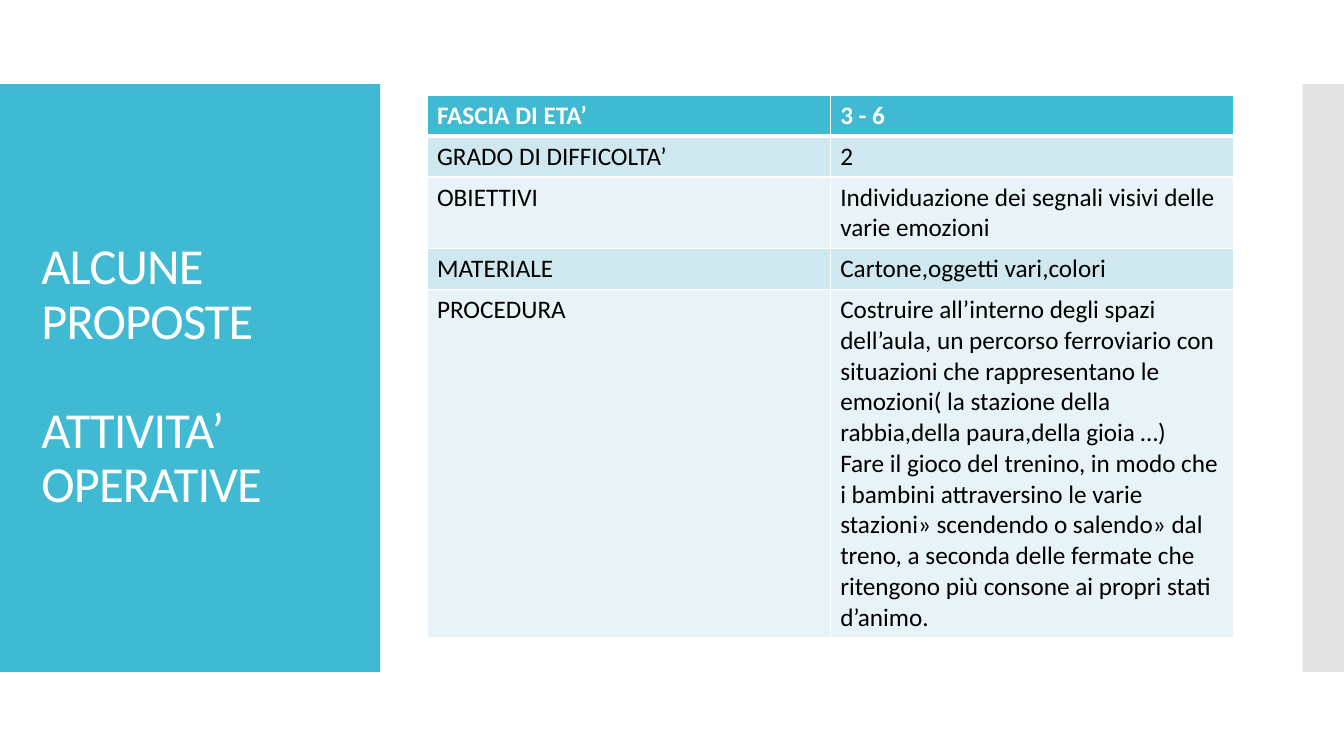
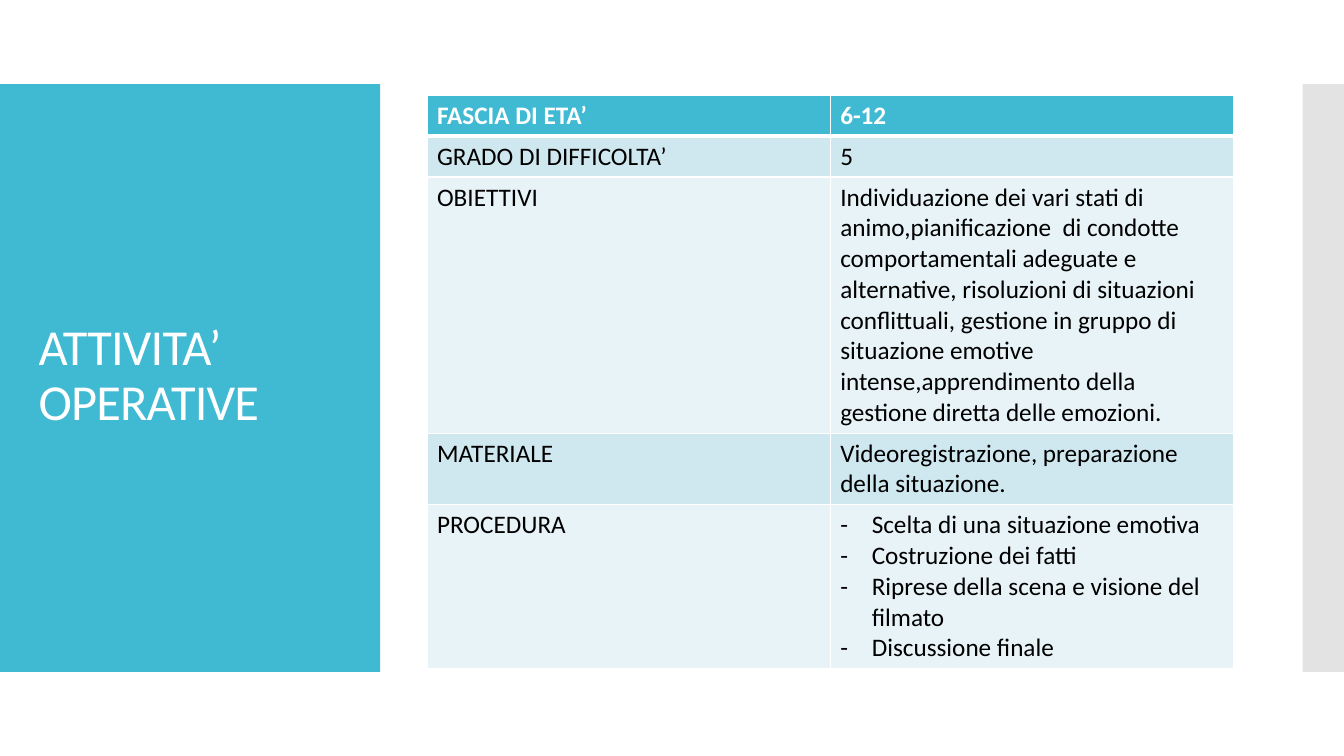
from dataclasses import dataclass

from lxml import etree
from pptx import Presentation
from pptx.dml.color import RGBColor
from pptx.enum.text import MSO_ANCHOR, MSO_AUTO_SIZE, PP_ALIGN
from pptx.enum.shapes import MSO_SHAPE
from pptx.oxml.ns import qn
from pptx.slide import Slide, SlideLayout
from pptx.util import Pt

RECTANGLE = MSO_SHAPE.RECTANGLE
MIDDLE = MSO_ANCHOR.MIDDLE
LEFT = PP_ALIGN.LEFT
NO_AUTOFIT = MSO_AUTO_SIZE.NONE

COLORS = {
    "teal": "40BAD2",
    "gray": "C8C8C8",
    "white": "FFFFFF",
    "black": "000000",
    "row_dark": "CFE7EE",
    "row_light": "E8F3F7",
}
FONT = "Calibri"
TITLE_ONLY = 5
PAGE_WIDTH, PAGE_HEIGHT = 960, 540
BAND_TOP, BAND_HEIGHT = 60, 420
TITLE_WIDTH, TITLE_HEIGHT = 232, 362
TABLE_LEFT, TABLE_TOP = 305, 68
COLUMN_WIDTH, ROW_HEIGHT = 288, 29.2
BULLET_INDENT = 22.5
LABELS = ["FASCIA DI ETA’", "GRADO DI DIFFICOLTA’", "OBIETTIVI", "MATERIALE", "PROCEDURA"]


@dataclass(frozen=True)
class Band:
    left: float
    width: float
    color: str
    opacity: int


@dataclass(frozen=True)
class Activity:
    title: list[str]
    title_left: float
    title_top: float
    age: str
    difficulty: str
    goals: str
    material: str
    procedure: list[str]
    bulleted: bool = False


BANDS = [
    Band(0, 271.5, "teal", 100),
    Band(930.5, 29.5, "gray", 50),
]

ACTIVITIES = [
    Activity(
        title=["ALCUNE PROPOSTE", "ATTIVITA’ OPERATIVE"],
        title_left=22.4,
        title_top=88.6,
        age="3 - 6",
        difficulty="2",
        goals="Individuazione dei segnali visivi delle varie emozioni",
        material="Cartone,oggetti vari,colori",
        procedure=[
            "Costruire all’interno degli spazi dell’aula, un percorso ferroviario con "
            "situazioni che rappresentano le emozioni( la stazione della "
            "rabbia,della paura,della gioia …)",
            "Fare il gioco del trenino, in modo che i bambini attraversino le varie "
            "stazioni» scendendo o salendo» dal treno, a seconda delle fermate che "
            "ritengono più consone ai propri stati d’animo.",
        ],
    ),
    Activity(
        title=["ATTIVITA’ OPERATIVE"],
        title_left=20.4,
        title_top=88,
        age="6-12",
        difficulty="5",
        goals="Individuazione dei vari stati di animo,pianificazione  di condotte "
        "comportamentali adeguate e alternative, risoluzioni di situazioni "
        "conflittuali, gestione in gruppo di situazione emotive "
        "intense,apprendimento della gestione diretta delle emozioni.",
        material="Videoregistrazione, preparazione della situazione.",
        procedure=[
            "Scelta di una situazione emotiva",
            "Costruzione dei fatti",
            "Riprese della scena e visione del filmato",
            "Discussione finale",
        ],
        bulleted=True,
    ),
]


def rgb(name: str) -> RGBColor:
    return RGBColor.from_string(COLORS[name])


def style_font(para, size: float, color: str, bold: bool = False) -> None:
    para.font.name = FONT
    para.font.size = Pt(size)
    para.font.bold = bold
    para.font.color.rgb = rgb(color)


def move_bands_to_layout(page: Slide, layout: SlideLayout) -> None:
    """Draw the bands on a page, then hand them to its layout, behind everything."""
    for index, band in enumerate(BANDS):
        box = page.shapes.add_shape(
            RECTANGLE, Pt(band.left), Pt(BAND_TOP), Pt(band.width), Pt(BAND_HEIGHT)
        )
        box.shadow.inherit = False
        box.fill.solid()
        box.fill.fore_color.rgb = rgb(band.color)
        box.line.fill.background()
        if band.opacity < 100:
            color = next(box.element.iter(qn("a:srgbClr")))
            etree.SubElement(color, qn("a:alpha"), val=str(band.opacity * 1000))
        box.element.nvSpPr.cNvPr.set("id", str(100 + index))
        layout.shapes.element.insert(2 + index, box.element)


def write_title(page: Slide, activity: Activity) -> None:
    title = page.shapes.title
    title.left, title.top = Pt(activity.title_left), Pt(activity.title_top)
    title.width, title.height = Pt(TITLE_WIDTH), Pt(TITLE_HEIGHT)
    frame = title.text_frame
    frame.text = "\n".join(activity.title)
    frame.word_wrap = True
    frame.auto_size = NO_AUTOFIT
    frame.vertical_anchor = MIDDLE
    for index, para in enumerate(frame.paragraphs):
        para.alignment = LEFT
        para.line_spacing = 0.9
        para.space_before = Pt(39 if index else 0)
        style_font(para, 36, "white")
    for properties in title.element.iter(qn("a:defRPr")):
        properties.set("spc", "-60")


def add_dash(para) -> None:
    properties = para._p.get_or_add_pPr()
    properties.set("marL", str(Pt(BULLET_INDENT)))
    properties.set("indent", str(-Pt(BULLET_INDENT)))
    etree.SubElement(properties, qn("a:buFont"), typeface=FONT)
    etree.SubElement(properties, qn("a:buChar"), char="-")


def set_borders(cell, widths: dict[str, float]) -> None:
    properties = cell._tc.get_or_add_tcPr()
    for side, width in widths.items():
        line = etree.SubElement(properties, qn(f"a:ln{side}"), w=str(Pt(width)))
        fill = etree.SubElement(line, qn("a:solidFill"))
        etree.SubElement(fill, qn("a:srgbClr"), val=COLORS["white"])


def fill_cell(cell, row: int, lines: list[str], bulleted: bool) -> None:
    header = row == 0
    set_borders(cell, {"L": 1, "R": 1, "T": 3 if row == 1 else 1, "B": 3 if header else 1})
    cell.fill.solid()
    cell.fill.fore_color.rgb = rgb(
        "teal" if header else "row_dark" if row % 2 else "row_light"
    )
    cell.text_frame.text = "\n".join(lines)
    for para in cell.text_frame.paragraphs:
        if bulleted:
            add_dash(para)
        style_font(para, 18, "white" if header else "black", bold=header)


def add_activity_table(page: Slide, activity: Activity) -> None:
    values = [
        [activity.age],
        [activity.difficulty],
        [activity.goals],
        [activity.material],
        activity.procedure,
    ]
    table = page.shapes.add_table(
        len(LABELS), 2, Pt(TABLE_LEFT), Pt(TABLE_TOP),
        Pt(2 * COLUMN_WIDTH), Pt(len(LABELS) * ROW_HEIGHT),
    ).table
    for column in table.columns:
        column.width = Pt(COLUMN_WIDTH)
    for row, (label, lines) in enumerate(zip(LABELS, values)):
        table.rows[row].height = Pt(ROW_HEIGHT)
        fill_cell(table.cell(row, 0), row, [label], False)
        fill_cell(table.cell(row, 1), row, lines, activity.bulleted and lines is activity.procedure)


def main() -> None:
    deck = Presentation()
    deck.slide_width, deck.slide_height = Pt(PAGE_WIDTH), Pt(PAGE_HEIGHT)
    layout = deck.slide_layouts[TITLE_ONLY]
    pages = [deck.slides.add_slide(layout) for _ in ACTIVITIES]
    move_bands_to_layout(pages[0], layout)
    for page, activity in zip(pages, ACTIVITIES):
        write_title(page, activity)
        add_activity_table(page, activity)
    deck.save("out.pptx")


if __name__ == "__main__":
    main()
